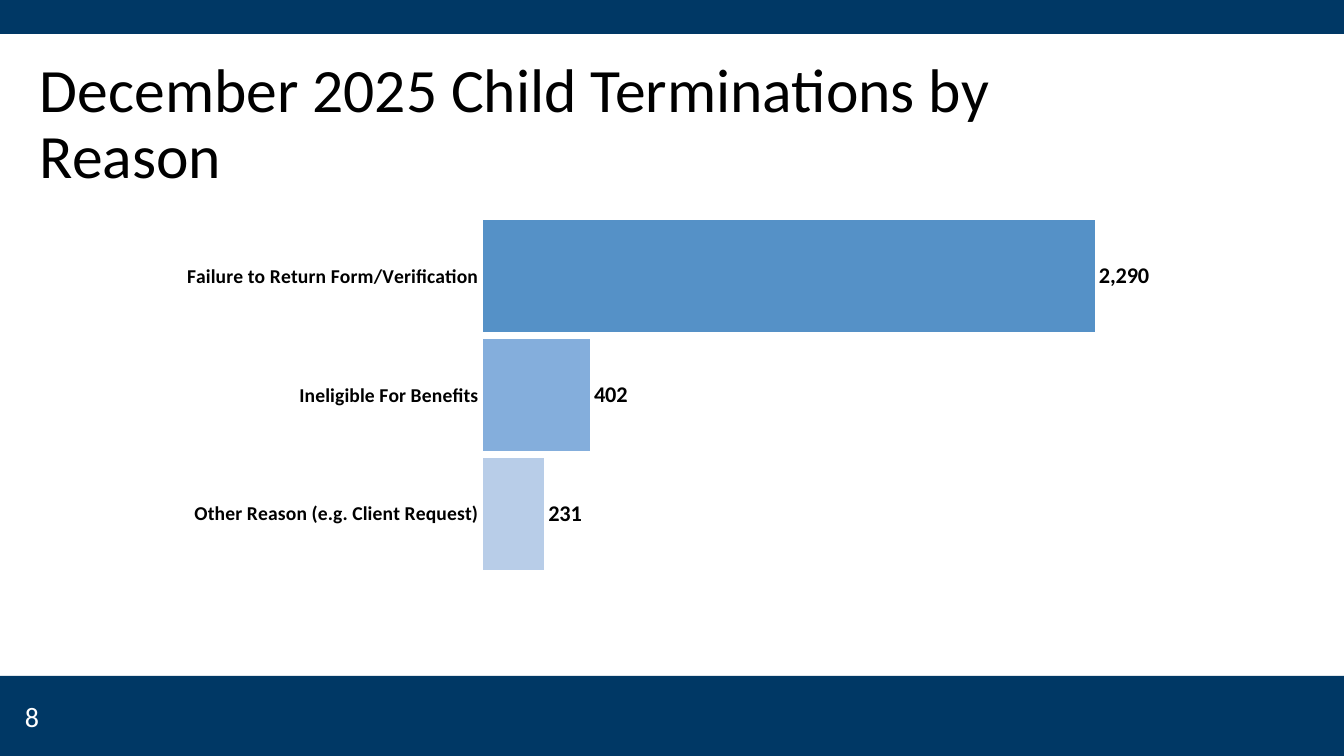
from lxml import etree
from pptx import Presentation
from pptx.chart.data import CategoryChartData
from pptx.dml.color import RGBColor
from pptx.enum.chart import XL_CHART_TYPE as ChartType, XL_LABEL_POSITION as LabelPosition
from pptx.enum.chart import XL_TICK_MARK as TickMark
from pptx.enum.shapes import MSO_SHAPE as Shape
from pptx.enum.text import MSO_ANCHOR as Anchor
from pptx.oxml.ns import qn
from pptx.util import Emu, Pt

TITLE = "December 2025 Child Terminations by Reason"
PAGE_NUMBER = "8"
# Bars run from the bottom up; the unnamed last one leaves room for the title
REASONS = [
    ("Other Reason (e.g. Client Request)", 231, "light"),
    ("Ineligible For Benefits", 402, "medium"),
    ("Failure to Return Form/Verification", 2290, "strong"),
    ("", None, None),
]

COLORS = {"navy": "003865", "black": "000000", "white": "FFFFFF",
          "light": "B8CDE8", "medium": "84AEDC", "strong": "5591C7"}
FONT = "Calibri"
COUNT_FORMAT = "#,##0"

# Lengths in px; boxes are left, top, width, height
PX = 914400 / 100.8
WIDTH, HEIGHT = 1344, 756
HEADER_HEIGHT, FOOTER_HEIGHT = 34, 80
FOOTER_TOP = HEIGHT - FOOTER_HEIGHT
NUMBER_HEIGHT = 40
TITLE_BOX = (30, 54, 1159, 120)
CHART_BOX = (187, 97, 970, 562)
NUMBER_BOX = (15, FOOTER_TOP + (FOOTER_HEIGHT - NUMBER_HEIGHT) // 2, 302, NUMBER_HEIGHT)
BAND_BOXES = [(0, 0, WIDTH, HEADER_HEIGHT), (0, FOOTER_TOP, WIDTH, FOOTER_HEIGHT)]
# Fractions of the chart box
PLOT_AREA = {"x": 0.303, "y": 0.002, "w": 0.691, "h": 0.846}


def px(*lengths):
    return [Emu(round(length * PX)) for length in lengths]


def rgb(name):
    return RGBColor.from_string(COLORS[name])


def apply(target, **settings):
    """Set each named attribute of the target."""
    for attribute, value in settings.items():
        setattr(target, attribute, value)


def set_font(font, size, color, bold=False):
    apply(font, name=FONT, size=Pt(size), bold=bold)
    font.color.rgb = rgb(color)


def set_fill(fill, color):
    fill.solid()
    fill.fore_color.rgb = rgb(color)


def add_band(slide, box):
    band = slide.shapes.add_shape(Shape.RECTANGLE, *px(*box))
    band.shadow.inherit = False
    set_fill(band.fill, "navy")
    band.line.fill.background()


def add_text(slide, text, box, size, color, anchor, line_spacing=1.0):
    frame = slide.shapes.add_textbox(*px(*box)).text_frame
    apply(frame, word_wrap=True, vertical_anchor=anchor)
    paragraph = frame.paragraphs[0]
    apply(paragraph, text=text, line_spacing=line_spacing)
    set_font(paragraph.runs[0].font, size, color)


def set_plot_layout(chart):
    """Fix the inner plot area, which python-pptx leaves automatic."""
    plot_area = chart.element.find(".//" + qn("c:plotArea"))
    for automatic in plot_area.findall(qn("c:layout")):
        plot_area.remove(automatic)
    layout = etree.Element(qn("c:layout"))
    plot_area.insert(0, layout)
    manual = etree.SubElement(layout, qn("c:manualLayout"))
    settings = {"layoutTarget": "inner", "xMode": "edge", "yMode": "edge", **PLOT_AREA}
    for tag, value in settings.items():
        etree.SubElement(manual, qn(f"c:{tag}")).set("val", str(value))


def style_bars(bars):
    apply(bars, gap_width=6, vary_by_categories=False)
    counts = bars.series[0]
    for index, (_, _, color) in enumerate(REASONS):
        if color:
            set_fill(counts.points[index].format.fill, color)
    apply(counts.data_labels, show_value=True, number_format=COUNT_FORMAT,
          number_format_is_linked=False, position=LabelPosition.OUTSIDE_END)
    set_font(counts.data_labels.font, 16, "black", bold=True)


def style_axes(reason_axis, count_axis):
    reason_axis.major_tick_mark = TickMark.INSIDE
    reason_axis.format.line.fill.background()
    set_font(reason_axis.tick_labels.font, 14, "black", bold=True)
    apply(count_axis, visible=False, has_major_gridlines=False,
          minimum_scale=0, maximum_scale=2500)


def add_reason_chart(slide):
    reasons, counts, _ = zip(*REASONS)
    data = CategoryChartData(number_format=COUNT_FORMAT)
    data.categories = reasons
    data.add_series("Series 1", counts)
    chart = slide.shapes.add_chart(ChartType.BAR_CLUSTERED, *px(*CHART_BOX), data).chart
    apply(chart, has_legend=False, has_title=False)
    set_font(chart.font, 10, "black")
    style_bars(chart.plots[0])
    style_axes(chart.category_axis, chart.value_axis)
    set_plot_layout(chart)


def main():
    deck = Presentation()
    deck.slide_width, deck.slide_height = px(WIDTH, HEIGHT)
    slide = deck.slides.add_slide(deck.slide_layouts[6])
    for box in BAND_BOXES:
        add_band(slide, box)
    add_text(slide, TITLE, TITLE_BOX, 44, "black", Anchor.TOP, line_spacing=0.9)
    add_reason_chart(slide)
    add_text(slide, PAGE_NUMBER, NUMBER_BOX, 20, "white", Anchor.MIDDLE)
    deck.save("out.pptx")


if __name__ == "__main__":
    main()
